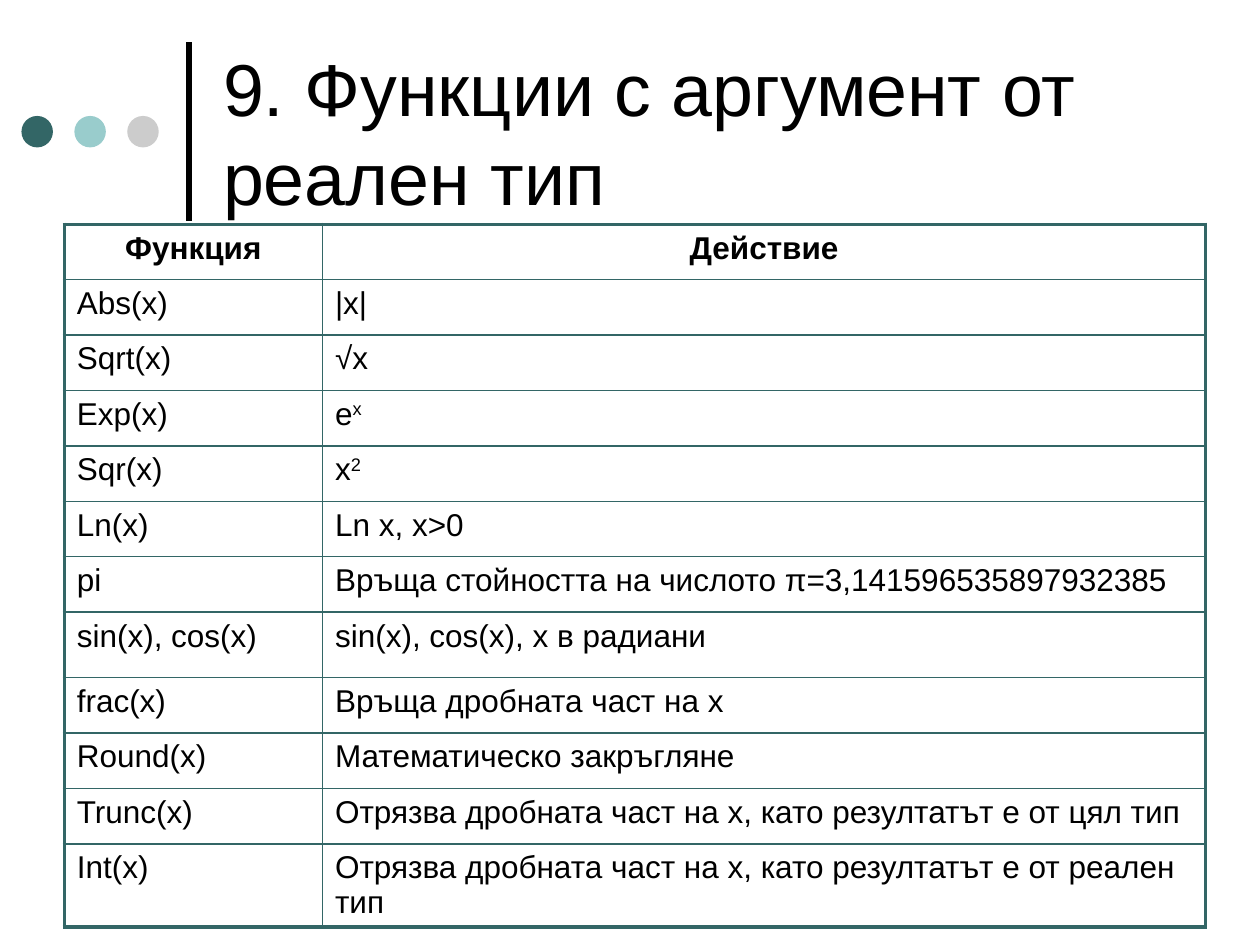
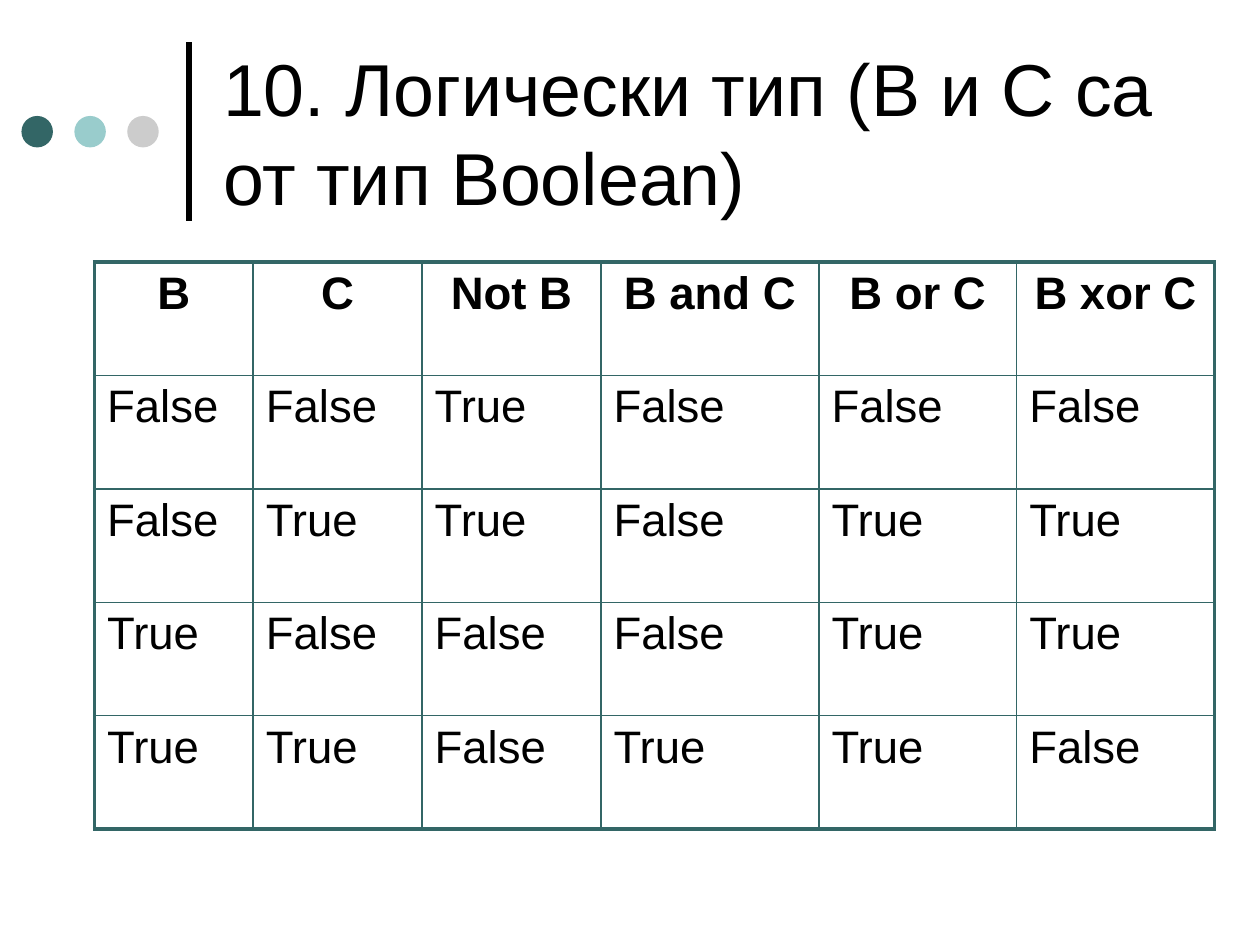
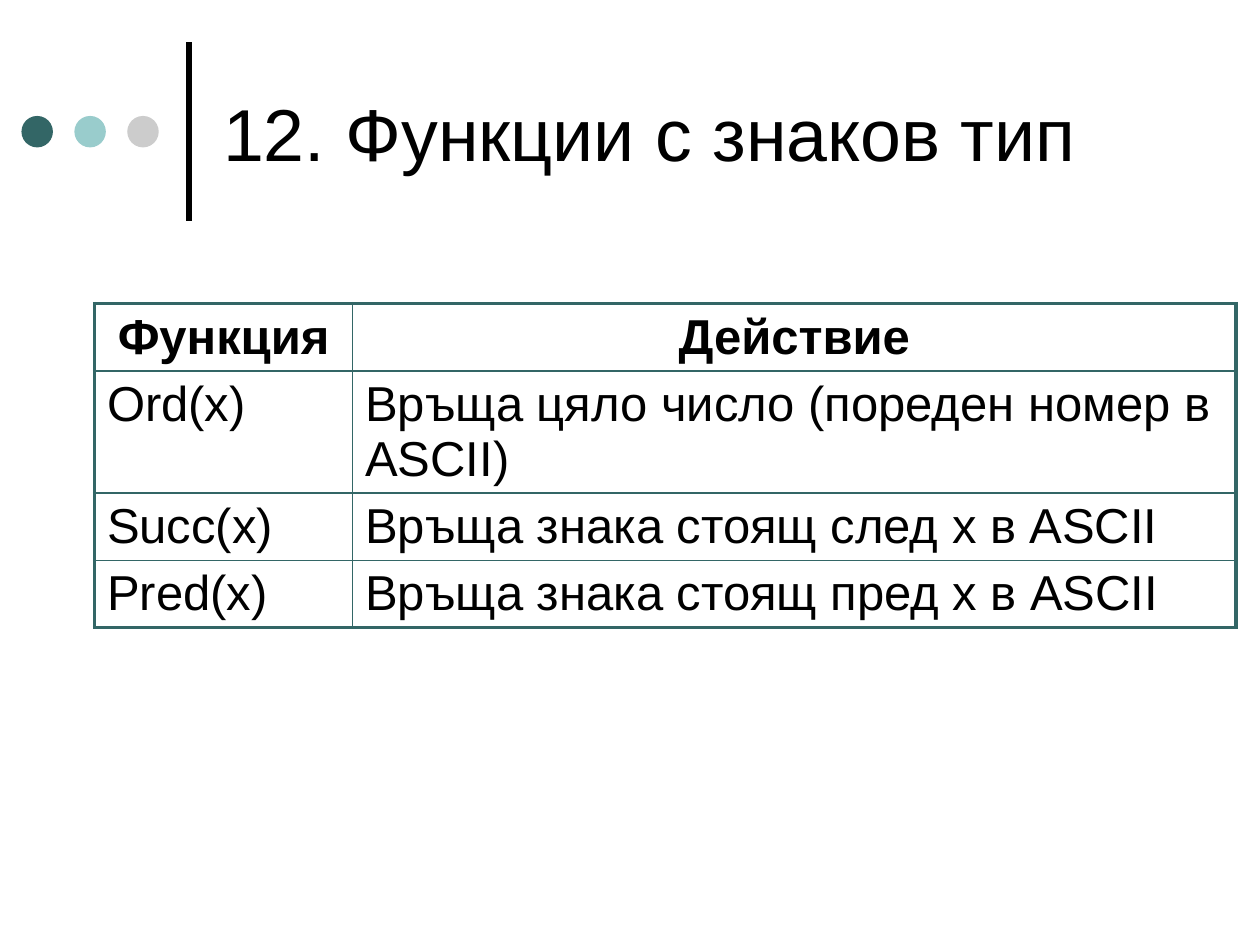
"""Build three slides on Pascal functions and logical operations."""
import pptx
import pptx.util
import pptx.dml.color
import pptx.enum.shapes
import pptx.enum.text
import pptx.oxml.ns
import lxml.etree

Inches, Pt = pptx.util.Inches, pptx.util.Pt
RGBColor = pptx.dml.color.RGBColor
PP_ALIGN = pptx.enum.text.PP_ALIGN
qn = pptx.oxml.ns.qn

BLACK = RGBColor(0x00, 0x00, 0x00)
TEAL = RGBColor(0x33, 0x66, 0x66)
AQUA = RGBColor(0x99, 0xCC, 0xCC)
GRAY = RGBColor(0xCC, 0xCC, 0xCC)
FONT = "Arial"
INNER, OUTER = 1, 2.25

FUNCTION_COLS = (2.05, 7.01)
FUNCTION_HEAD = ("Функция", "Действие")

SLIDES = [
    {
        "title": "9. Функции с аргумент от реален тип",
        "at": (0.51, 1.78),
        "size": 18,
        "cols": FUNCTION_COLS,
        "heights": [0.44] * 7 + [0.52] + [0.44] * 4,
        "rows": [
            FUNCTION_HEAD,
            ("Abs(x)", "|x|"),
            ("Sqrt(x)", "√x"),
            ("Exp(x)", "e^x"),
            ("Sqr(x)", "x^2"),
            ("Ln(x)", "Ln x, x>0"),
            ("pi", "Връща стойността на числото π=3,141596535897932385"),
            ("sin(x), cos(x)", "sin(x), cos(x), x в радиани"),
            ("frac(x)", "Връща дробната част на x"),
            ("Round(x)", "Математическо закръгляне"),
            ("Trunc(x)", "Отрязва дробната част на x, като резултатът е от цял тип"),
            ("Int(x)", "Отрязва дробната част на x, като резултатът е от реален тип"),
        ],
    },
    {
        "title": "10. Логически тип (B и C са от тип Boolean)",
        "at": (0.75, 2.08),
        "size": 26,
        "cols": (1.26, 1.34, 1.42, 1.73, 1.57, 1.57),
        "heights": [0.9] * 5,
        "rows": [
            ("B", "C", "Not B", "B and C", "B or C", "B xor C"),
            ("False", "False", "True", "False", "False", "False"),
            ("False", "True", "True", "False", "True", "True"),
            ("True", "False", "False", "False", "True", "True"),
            ("True", "True", "False", "True", "True", "False"),
        ],
    },
    {
        "title": "12. Функции с знаков тип",
        "at": (0.75, 2.41),
        "size": 28,
        "cols": FUNCTION_COLS,
        "heights": [0.53, 0.97, 0.53, 0.53],
        "rows": [
            FUNCTION_HEAD,
            ("Ord(x)", "Връща цяло число (пореден номер в ASCII)"),
            ("Succ(x)", "Връща знака стоящ след x в ASCII"),
            ("Pred(x)", "Връща знака стоящ пред x в ASCII"),
        ],
    },
]


def add_run(p, text, size, bold=False):
    r = p.add_run()
    r.text = text
    for name, value in {"name": FONT, "size": Pt(size), "bold": bold}.items():
        setattr(r.font, name, value)
    r.font.color.rgb = BLACK
    return r


def add_decor(s):
    bar = s.shapes.add_connector(
        pptx.enum.shapes.MSO_CONNECTOR.STRAIGHT,
        Inches(1.5), Inches(1.75), Inches(1.5), Inches(0.33))
    bar.line.color.rgb = BLACK
    bar.line.width = Pt(3)
    lxml.etree.SubElement(bar._element.spPr, qn("a:effectLst"))
    for i, color in enumerate((TEAL, AQUA, GRAY)):
        dot = s.shapes.add_shape(
            pptx.enum.shapes.MSO_SHAPE.OVAL, Inches(0.17 + 0.42 * i),
            Inches(0.92), Inches(0.25), Inches(0.25))
        dot.shadow.inherit = False
        dot.fill.solid()
        dot.fill.fore_color.rgb = color
        dot.line.fill.background()


def set_title(s, text):
    sp = s.shapes.title
    box = {"left": 1.67, "top": 0.21, "width": 7.67, "height": 1.67}
    for name, value in box.items():
        setattr(sp, name, Inches(value))
    tf = sp.text_frame
    tf.word_wrap = True
    tf.auto_size = pptx.enum.text.MSO_AUTO_SIZE.NONE
    tf.vertical_anchor = pptx.enum.text.MSO_ANCHOR.MIDDLE
    p = tf.paragraphs[0]
    p.alignment = PP_ALIGN.LEFT
    add_run(p, text, 42)


def set_borders(cell, widths):
    tcPr = cell._tc.get_or_add_tcPr()
    for side, width in widths.items():
        ln = lxml.etree.SubElement(tcPr, qn("a:ln" + side), w=str(Pt(width)))
        fill = lxml.etree.SubElement(ln, qn("a:solidFill"))
        lxml.etree.SubElement(fill, qn("a:srgbClr"), val=str(TEAL))


def fill_cell(cell, text, size, header):
    p = cell.text_frame.paragraphs[0]
    p.alignment = PP_ALIGN.CENTER if header else PP_ALIGN.LEFT
    base, _, power = text.partition("^")
    add_run(p, base, size, header)
    if power:
        r = add_run(p, power, size, header)
        r._r.get_or_add_rPr().set("baseline", "30000")


def add_grid(s, content):
    rows, cols, heights = content["rows"], content["cols"], content["heights"]
    left, top = content["at"]
    table = s.shapes.add_table(
        len(rows), len(cols), Inches(left), Inches(top),
        Inches(sum(cols)), Inches(sum(heights))).table
    table.first_row = table.horz_banding = False
    for column, width in zip(table.columns, cols):
        column.width = Inches(width)
    for row, height in zip(table.rows, heights):
        row.height = Inches(height)
    last_row, last_col = len(rows) - 1, len(cols) - 1
    for i, row in enumerate(rows):
        for j, text in enumerate(row):
            cell = table.cell(i, j)
            fill_cell(cell, text, content["size"], i == 0)
            edges = {"L": j == 0, "R": j == last_col, "T": i == 0, "B": i == last_row}
            set_borders(cell, {k: OUTER if edge else INNER for k, edge in edges.items()})
            cell.fill.background()


def main():
    prs = pptx.Presentation()
    prs.slide_width, prs.slide_height = Inches(10), Inches(7.5)
    for content in SLIDES:
        s = prs.slides.add_slide(prs.slide_layouts[5])
        add_decor(s)
        set_title(s, content["title"])
        add_grid(s, content)
    prs.save("out.pptx")


if __name__ == "__main__":
    main()
